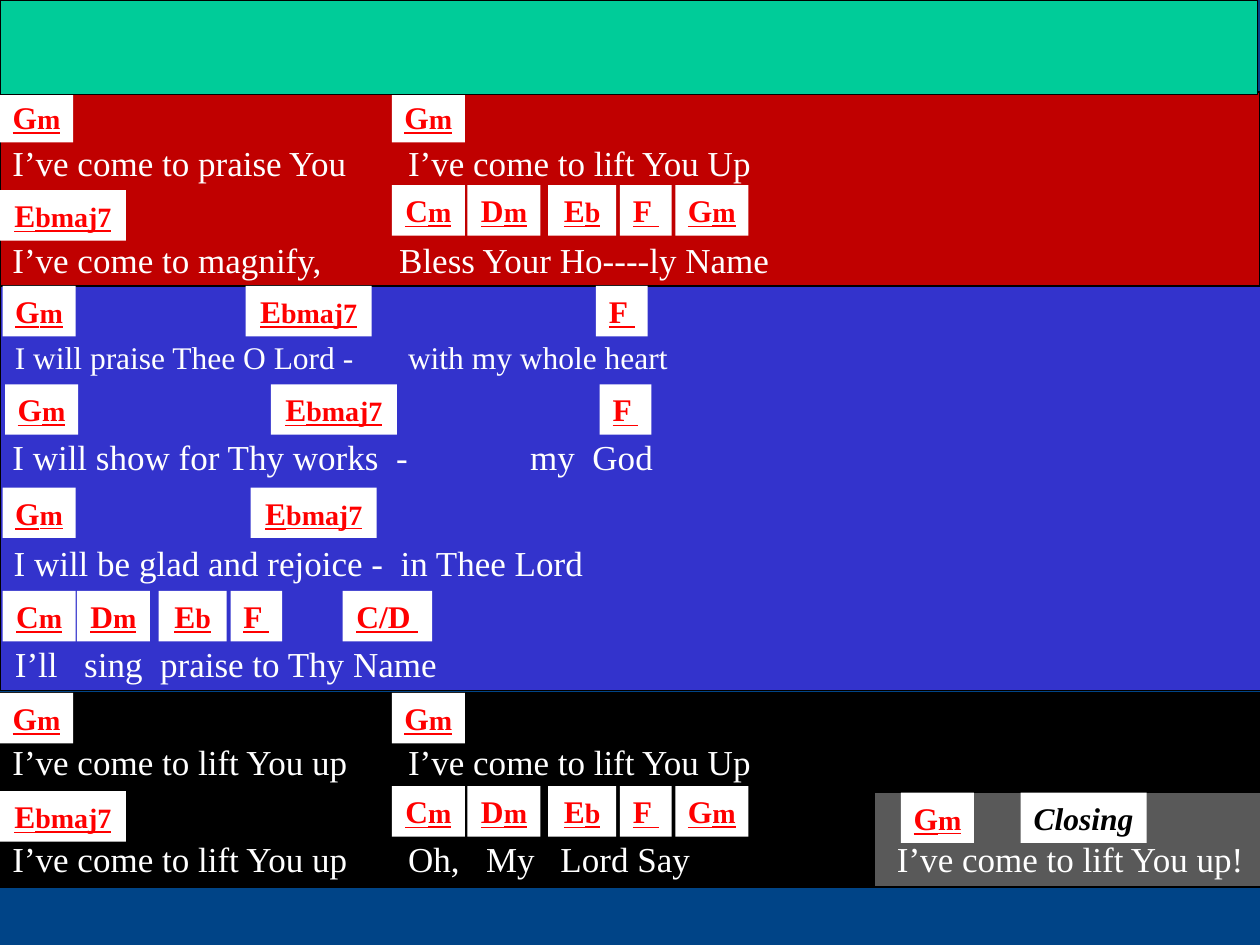
from dataclasses import dataclass

from lxml.etree import SubElement
from pptx import Presentation
from pptx.dml.color import RGBColor
from pptx.enum.shapes import MSO_SHAPE
from pptx.enum.text import MSO_ANCHOR, PP_ALIGN
from pptx.oxml.ns import qn
from pptx.util import Inches, Pt


@dataclass(frozen=True)
class Theme:
    font: str = "Times New Roman"
    lyric_size: int = 20
    chord_size: int = 18
    suffix_size: int = 16
    white: str = "FFFFFF"
    black: str = "000000"
    chord: str = "FF0000"
    header: str = "00CC99"
    refrain: str = "C00000"
    verse: str = "3333CC"
    closing: str = "595959"
    backdrop: tuple = ("0066CC", "004487")


THEME = Theme()
SLIDE_W, SLIDE_H = 10, 7.5
LYRIC_H, CHORD_H = 0.44, 0.4
REFRAIN_TOP, VERSE_TOP, ENDING_TOP, CLOSING_TOP = 0.73, 2.27, 5.5, 6.29

# Chord: (root, suffix, box width)
CHORDS = {
    "Gm": ("G", "m", 0.58), "Cm": ("C", "m", 0.58), "Dm": ("D", "m", 0.58),
    "Ebmaj7": ("E", "bmaj7", 1), "Eb": ("E", "b", 0.54),
    "F": ("F ", "", 0.41), "C/D": ("C/D ", "", 0.71),
}

# Panel: left, top, width, height, colour
PANELS = [
    (0, ENDING_TOP, 10.02, 1.54, THEME.black),
    (6.94, CLOSING_TOP, 3.08, 0.75, THEME.closing),
    (0, REFRAIN_TOP, 10, 1.54, THEME.refrain),
    (0, VERSE_TOP, 10.02, 3.21, THEME.verse),
]
HEADER = (0, 0, 9.98, 0.75, THEME.header)

# Lyric: left, top, width, size, phrases, tab stop of each later phrase
LYRICS = [
    (0, 1.07, 10, THEME.lyric_size, ["I’ve come to praise You", "I’ve come to lift You Up"], [3.14]),
    (0, 1.84, 10, THEME.lyric_size, ["I’ve come to magnify,", "Bless Your Ho----ly Name"], [3.07]),
    (0.02, 2.63, 10, THEME.chord_size, ["I will praise Thee O Lord -", "with my whole heart"], [3.12]),
    (0, 3.41, 10, THEME.lyric_size, ["I will show for Thy works  -", "my  God"], [4.11]),
    (0.01, 4.25, 10, THEME.lyric_size, ["I will be glad and rejoice -  in Thee Lord"], []),
    (0.02, 5.05, 10, THEME.lyric_size, ["I’ll", "sing  praise to Thy Name"], [0.55]),
    (0, 5.83, 10, THEME.lyric_size, ["I’ve come to lift You up", "I’ve come to lift You Up"], [3.14]),
    (0, 6.6, 10, THEME.lyric_size, ["I’ve come to lift You up", "Oh,", "My", "Lord Say"], [3.14, 3.76, 4.35]),
    (7.02, 6.6, 3, THEME.lyric_size, ["I’ve come to lift You up!"], []),
]

# Chord rows: top below the stanza's own top, then chord and left edge
REFRAIN_ROWS = [
    (0, [("Gm", 0), ("Gm", 3.11)]),
    (0.78, [("Ebmaj7", 0)]),
    (0.74, [("Cm", 3.11), ("Dm", 3.71), ("Eb", 4.35), ("F", 4.92), ("Gm", 5.36)]),
]
VERSE_ROWS = [
    (0, [("Gm", 0.02), ("Ebmaj7", 1.95), ("F", 4.73)]),
    (0.78, [("Gm", 0.04), ("Ebmaj7", 2.15), ("F", 4.76)]),
    (1.6, [("Gm", 0.02), ("Ebmaj7", 1.99)]),
    (2.42, [("Cm", 0.02), ("Dm", 0.61), ("Eb", 1.26), ("F", 1.83), ("C/D", 2.72)]),
]
CLOSING_ROWS = [(0, [("Gm", 7.15)])]
STANZAS = [
    (REFRAIN_TOP, REFRAIN_ROWS),
    (VERSE_TOP, VERSE_ROWS),
    (ENDING_TOP, REFRAIN_ROWS),
    (CLOSING_TOP, CLOSING_ROWS),
]


def write(shape, runs, *, color, align=PP_ALIGN.LEFT, wrap=False, tabs=(), **style):
    """Fill a shape with one paragraph of (text, size) runs."""
    frame = shape.text_frame
    frame.word_wrap = wrap
    frame.vertical_anchor = MSO_ANCHOR.TOP
    paragraph = frame.paragraphs[0]
    paragraph.alignment = align
    for words, size in runs:
        run = paragraph.add_run()
        run.text = words
        run.font.name = THEME.font
        run.font.size = Pt(size)
        run.font.color.rgb = RGBColor.from_string(color)
        for name, value in style.items():
            setattr(run.font, name, value)
    if tabs:
        stops = SubElement(paragraph._p.get_or_add_pPr(), qn("a:tabLst"))
        for position in tabs:
            SubElement(stops, qn("a:tab"), pos=str(Inches(position)), algn="l")


def add_box(slide, left, top, width, height, fill, outline=None):
    box = slide.shapes.add_shape(
        MSO_SHAPE.RECTANGLE, *map(Inches, (left, top, width, height)))
    box.shadow.inherit = False
    box.fill.solid()
    box.fill.fore_color.rgb = RGBColor.from_string(fill)
    if outline:
        box.line.color.rgb = RGBColor.from_string(outline)
        box.line.width = Pt(0.75)
    else:
        box.line.fill.background()
    return box


def add_chord(slide, chord, left, top):
    root, suffix, width = CHORDS[chord]
    runs = [(root, THEME.chord_size)]
    if suffix:
        runs.append((suffix, THEME.suffix_size))
    box = add_box(slide, left, top, width, CHORD_H, THEME.white)
    write(box, runs, color=THEME.chord, align=PP_ALIGN.CENTER, bold=True, underline=True)


def paint_backdrop(slide):
    """Gradient that spreads from the top left corner."""
    fill = slide.background.fill
    fill.gradient()
    for stop, color in zip(fill.gradient_stops, THEME.backdrop):
        stop.color.rgb = RGBColor.from_string(color)
    gradient = slide.element.find(".//" + qn("a:gradFill"))
    gradient.remove(gradient.find(qn("a:lin")))
    spread = SubElement(gradient, qn("a:path"), {"path": "rect"})
    SubElement(spread, qn("a:fillToRect"), r="100000", b="100000")


def main():
    deck = Presentation()
    deck.slide_width, deck.slide_height = Inches(SLIDE_W), Inches(SLIDE_H)
    slide = deck.slides.add_slide(deck.slide_layouts[6])
    paint_backdrop(slide)

    for *place, color in PANELS:
        add_box(slide, *place, color, outline=THEME.black)
    for left, top, width, size, phrases, tabs in LYRICS:
        lyric = slide.shapes.add_textbox(*map(Inches, (left, top, width, LYRIC_H)))
        write(lyric, [("\t".join(phrases), size)], color=THEME.white, wrap=True, tabs=tabs)
    for stanza_top, rows in STANZAS:
        for offset, chords in rows:
            for chord, left in chords:
                add_chord(slide, chord, left, stanza_top + offset)

    closing = add_box(slide, 8.1, CLOSING_TOP, 1, CHORD_H, THEME.white)
    write(closing, [("Closing", THEME.chord_size)], color=THEME.black,
          align=PP_ALIGN.CENTER, bold=True, italic=True)
    *place, color = HEADER
    add_box(slide, *place, color, outline=THEME.black)
    deck.save("out.pptx")


if __name__ == "__main__":
    main()
